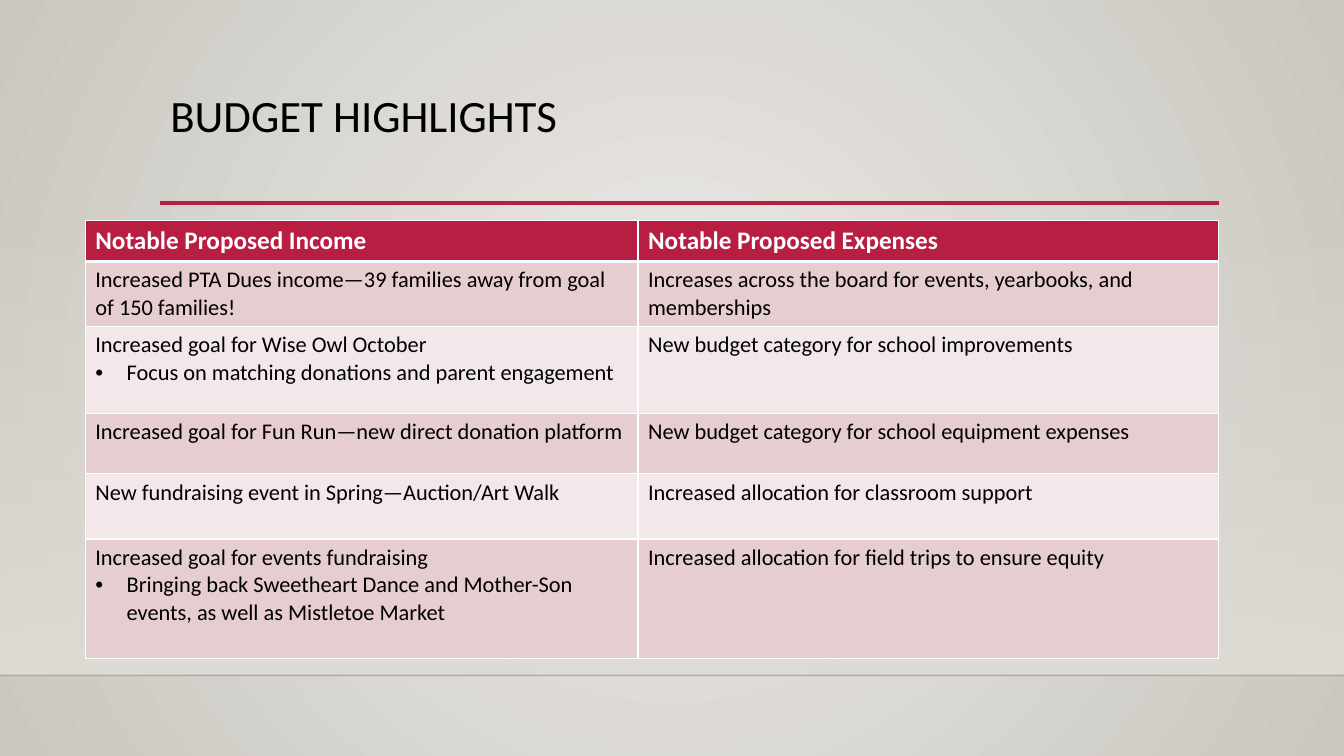
"""Build the budget highlights slide with its income and expense table."""
from lxml import etree
from pptx import Presentation
from pptx.dml.color import RGBColor
from pptx.enum.shapes import MSO_CONNECTOR, MSO_SHAPE
from pptx.enum.text import MSO_ANCHOR, PP_ALIGN
from pptx.oxml.ns import qn
from pptx.util import Cm, Pt

RECTANGLE = MSO_SHAPE.RECTANGLE
STRAIGHT = MSO_CONNECTOR.STRAIGHT
TOP = MSO_ANCHOR.TOP
LEFT = PP_ALIGN.LEFT

FONT = "Calibri"
RED, WHITE, BLACK = "B71E42", "FFFFFF", "000000"
BANDS = ["E6CDCF", "F3E8E9"]
BACKDROP = ["ECEAE7", "CAC7C1"]
WALL = "DFDBD5"

TITLE = "BUDGET HIGHLIGHTS"
ROWS = [
    (["Notable Proposed Income"], ["Notable Proposed Expenses"]),
    (["Increased PTA Dues income—39 families away from goal of 150 families!"],
     ["Increases across the board for events, yearbooks, and memberships"]),
    (["Increased goal for Wise Owl October",
      "Focus on matching donations and parent engagement"],
     ["New budget category for school improvements"]),
    (["Increased goal for Fun Run—new direct donation platform"],
     ["New budget category for school equipment expenses"]),
    (["New fundraising event in Spring—Auction/Art Walk"],
     ["Increased allocation for classroom support"]),
    (["Increased goal for events fundraising",
      "Bringing back Sweetheart Dance and Mother-Son events, as well as Mistletoe Market"],
     ["Increased allocation for field trips to ensure equity"]),
]
COLUMN_WIDTHS = [13.93, 14.62]
ROW_HEIGHTS = [1.03, 1.64, 2.19, 1.52, 1.64, 3.02]
TABLE_LEFT, TABLE_TOP = 2.15, 5.56
SLIDE_WIDTH, SLIDE_HEIGHT = 33.87, 19.05
WALL_TOP, FLOOR_TOP = 5.61, 17.02
RULE_LEFT, RULE_RIGHT, RULE_TOP = 4.04, 30.73, 5.12


def color(value):
    return RGBColor.from_string(value)


def set_alpha(color_element, percent):
    etree.SubElement(color_element, qn("a:alpha"), val=str(percent * 1000))


def set_gradient(fill, values):
    fill.gradient()
    for stop, value in zip(fill.gradient_stops, values):
        stop.color.rgb = color(value)


def paint_background(slide):
    set_gradient(slide.background.fill, BACKDROP)
    linear = next(slide.element.iter(qn("a:lin")))
    radial = etree.Element(qn("a:path"), path="circle")
    etree.SubElement(radial, qn("a:fillToRect"), l="50000", t="50000", r="50000", b="50000")
    linear.getparent().replace(linear, radial)


def add_wall(slide):
    wall = slide.shapes.add_shape(
        RECTANGLE, 0, Cm(WALL_TOP), Cm(SLIDE_WIDTH), Cm(FLOOR_TOP - WALL_TOP))
    wall.shadow.inherit = False
    wall.line.fill.background()
    set_gradient(wall.fill, [WALL, WALL])
    wall.fill.gradient_angle = 270
    set_alpha(next(wall.element.iter(qn("a:srgbClr"))), 0)


def add_rule(slide, left, right, top, value, width):
    rule = slide.shapes.add_connector(STRAIGHT, Cm(left), Cm(top), Cm(right), Cm(top))
    rule.line.color.rgb = color(value)
    rule.line.width = Pt(width)
    etree.SubElement(rule.element.spPr, qn("a:effectLst"))
    return rule


def format_runs(paragraph, size, value, bold=False):
    for run in paragraph.runs:
        run.font.name = FONT
        run.font.size = Pt(size)
        run.font.bold = bold
        run.font.color.rgb = color(value)


def add_title(slide):
    title = slide.shapes.title
    title.left, title.top, title.width, title.height = Cm(4.04), Cm(2.24), Cm(26.67), Cm(1.83)
    frame = title.text_frame
    frame.text = TITLE
    frame.vertical_anchor = TOP
    paragraph = frame.paragraphs[0]
    paragraph.alignment = LEFT
    paragraph.line_spacing = 0.9
    format_runs(paragraph, 32, BLACK)


def set_borders(cell, row):
    widths = {"L": 1, "R": 1, "T": 3 if row == 1 else 1, "B": 3 if row == 0 else 1}
    properties = cell._tc.get_or_add_tcPr()
    for side, width in widths.items():
        line = etree.SubElement(properties, qn(f"a:ln{side}"), w=str(Pt(width)))
        fill = etree.SubElement(line, qn("a:solidFill"))
        etree.SubElement(fill, qn("a:srgbClr"), val=WHITE)


def set_bullet(paragraph):
    properties = paragraph._p.get_or_add_pPr()
    properties.set("marL", str(Cm(0.79)))
    properties.set("indent", str(-Cm(0.79)))
    etree.SubElement(properties, qn("a:buFont"), typeface="Arial")
    etree.SubElement(properties, qn("a:buChar"), char="•")


def fill_cell(cell, lines, row):
    header = row == 0
    set_borders(cell, row)
    cell.fill.solid()
    cell.fill.fore_color.rgb = color(RED if header else BANDS[(row - 1) % 2])
    cell.text_frame.text = "\n".join(lines)
    for index, paragraph in enumerate(cell.text_frame.paragraphs):
        if index:
            set_bullet(paragraph)
        format_runs(paragraph, 18 if header else 16, WHITE if header else BLACK, header)


def add_budget_table(slide):
    table = slide.shapes.add_table(
        len(ROWS), len(COLUMN_WIDTHS), Cm(TABLE_LEFT), Cm(TABLE_TOP),
        Cm(sum(COLUMN_WIDTHS)), Cm(sum(ROW_HEIGHTS))).table
    for column, width in zip(table.columns, COLUMN_WIDTHS):
        column.width = Cm(width)
    for row, height in zip(table.rows, ROW_HEIGHTS):
        row.height = Cm(height)
    for row, entries in enumerate(ROWS):
        for column, lines in enumerate(entries):
            fill_cell(table.cell(row, column), lines, row)


def main():
    presentation = Presentation()
    presentation.slide_width = Cm(SLIDE_WIDTH)
    presentation.slide_height = Cm(SLIDE_HEIGHT)
    slide = presentation.slides.add_slide(presentation.slide_layouts[5])
    paint_background(slide)
    add_wall(slide)
    floor_edge = add_rule(slide, 0, SLIDE_WIDTH, FLOOR_TOP, "000001", 1)
    set_alpha(next(floor_edge.element.iter(qn("a:srgbClr"))), 20)
    add_rule(slide, RULE_LEFT, RULE_RIGHT, RULE_TOP, RED, 2.5)
    add_title(slide)
    add_budget_table(slide)
    presentation.save("out.pptx")


if __name__ == "__main__":
    main()
